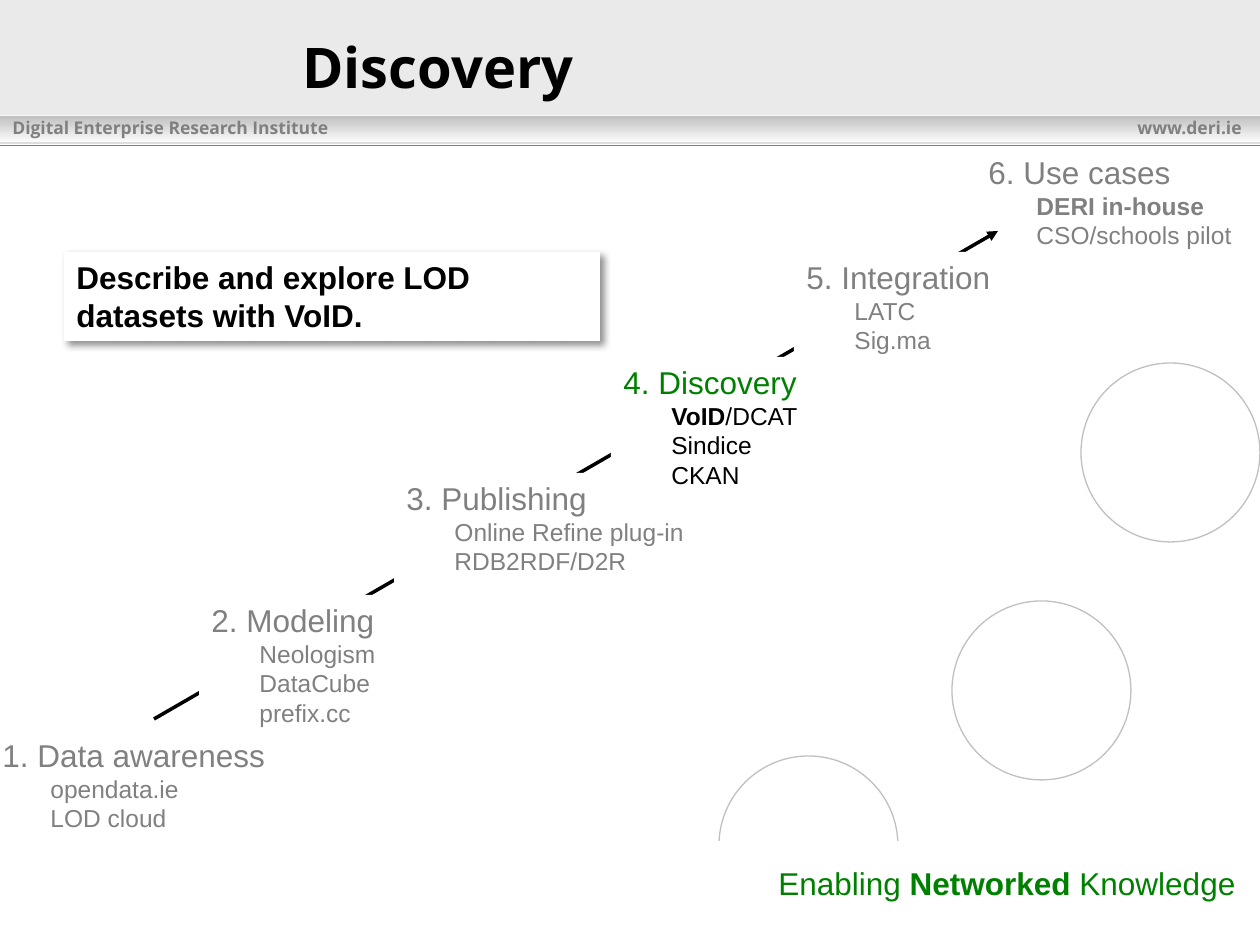
import copy
from dataclasses import dataclass

import pptx
import pptx.dml.color
import pptx.enum.shapes
import pptx.enum.text
import pptx.oxml
import pptx.oxml.ns
import pptx.util

SHAPE = pptx.enum.shapes.MSO_SHAPE
NS = pptx.oxml.ns.nsdecls("a")
qn = pptx.oxml.ns.qn


@dataclass(frozen=True)
class Theme:
    body: str = "Arial"
    heading: str = "Open Sans"
    black: str = "000000"
    white: str = "FFFFFF"
    grey: str = "808080"
    green: str = "008000"
    silver: str = "C0C0C0"
    band: str = "EAEAEA"
    rule: str = "DDDDDD"
    pale: str = "F8F8F8"
    title_size: int = 32
    large: int = 18
    detail: int = 14
    small: int = 10


T = Theme()


def px(n):
    return round(n * 914400 / 126)


def rgb(code):
    return pptx.dml.color.RGBColor.from_string(code)


def add_shape(slide, kind, box, fill=None, line=None):
    sp = slide.shapes.add_shape(kind, *map(px, box))
    sp.shadow.inherit = False
    if fill:
        sp.fill.solid()
        sp.fill.fore_color.rgb = rgb(fill)
    else:
        sp.fill.background()
    if line:
        sp.line.color.rgb = rgb(line)
        sp.line.width = pptx.util.Pt(0.75)
    else:
        sp.line.fill.background()
    return sp


def add_line(slide, start, end, color, width, arrow=False):
    c = slide.shapes.add_connector(
        pptx.enum.shapes.MSO_CONNECTOR.STRAIGHT, *map(px, start + end))
    c.line.color.rgb = rgb(color)
    c.line.width = pptx.util.Pt(width)
    if arrow:
        c.line._get_or_add_ln().append(
            pptx.oxml.parse_xml(f'<a:tailEnd {NS} type="triangle"/>'))
    c._element.spPr.append(pptx.oxml.parse_xml(f"<a:effectLst {NS}/>"))


def add_text(slide, box, runs, font=T.body, fill=None, wrap=True,
             hang=0, middle=False):
    """Each run is (text, size, color, bold); a line feed breaks the line."""
    if fill:
        sp = add_shape(slide, SHAPE.RECTANGLE, box, fill)
    else:
        sp = slide.shapes.add_textbox(*map(px, box))
    tf = sp.text_frame
    tf.word_wrap = wrap
    anchor = pptx.enum.text.MSO_ANCHOR
    tf.vertical_anchor = anchor.MIDDLE if middle else anchor.TOP
    p = tf.paragraphs[0]
    p.alignment = pptx.enum.text.PP_ALIGN.LEFT
    if hang:
        pPr = p._p.get_or_add_pPr()
        pPr.set("marL", str(px(hang)))
        pPr.set("indent", str(-px(hang)))
    for text, size, color, bold in runs:
        for i, part in enumerate(text.split("\n")):
            if i:
                p.add_line_break()
            if part:
                r = p.add_run()
                r.text = part
                r.font.name = font
                r.font.size = pptx.util.Pt(size)
                r.font.bold = bold
                r.font.color.rgb = rgb(color)
    # Breaks take the format of the run before them
    for br in p._p.findall(qn("a:br")):
        br.append(copy.deepcopy(br.getprevious().find(qn("a:rPr"))))
    return sp


def add_step(slide, box, heading, details, active=False, fill=T.white,
             wrap=False):
    """details lists (text, bold) pairs below the numbered heading."""
    head_color, color = (T.green, T.black) if active else (T.grey, T.grey)
    runs = [(heading + "\n", T.large, head_color, False)]
    runs += [(text, T.detail, color, bold) for text, bold in details]
    add_text(slide, box, runs, fill=fill, wrap=wrap, hang=48)


def add_background(slide):
    # Title band and circles, the lowest one cut by the footer
    add_shape(slide, SHAPE.RECTANGLE, (0, 0, 1260, 115), T.band)
    for x, y in ((719, 756), (952, 601), (1081, 363)):
        add_shape(slide, SHAPE.OVAL, (x, y, 179, 179), line=T.silver)
    add_shape(slide, SHAPE.RECTANGLE, (0, 841, 1260, 104), T.white)

    # Institute bar
    bar = add_shape(slide, SHAPE.RECTANGLE, (0, 116, 1260, 28))
    bar.fill.gradient()
    bar.fill.gradient_angle = 270
    for stop, color, pos in zip(bar.fill.gradient_stops,
                                (T.silver, T.white), (0, 1)):
        stop.color.rgb = rgb(color)
        stop.position = pos
    for y, color, width in ((145, T.grey, 0.5), (143, T.rule, 1.5),
                            (115, T.pale, 0.5)):
        add_line(slide, (0, y), (1260, y), color, width)
    for box, text in (((0, 111, 412, 34), "Digital Enterprise Research Institute"),
                      ((1125, 111, 134, 34), "www.deri.ie")):
        add_text(slide, box, [(text, T.small, T.grey, True)], T.heading)

    # Footer motto
    add_text(slide, (766, 858, 494, 50),
             [("Enabling", T.large, T.green, False),
              (" Networked ", T.large, T.green, True),
              ("Knowledge", T.large, T.green, False)])


def add_callout(slide):
    sp = add_text(slide, (64, 252, 536, 89),
                  [("Describe and explore LOD datasets with VoID.",
                    T.large, T.black, True)], fill=T.white)
    sp._element.spPr.find(qn("a:effectLst")).append(pptx.oxml.parse_xml(
        f'<a:outerShdw {NS} blurRad="50800" dist="38100" dir="2700000" '
        f'algn="tl" rotWithShape="0"><a:srgbClr val="{T.black}">'
        '<a:alpha val="43000"/></a:srgbClr></a:outerShdw>'))


def main():
    prs = pptx.Presentation()
    prs.slide_width, prs.slide_height = px(1260), px(945)
    slide = prs.slides.add_slide(prs.slide_layouts[6])
    add_background(slide)
    add_text(slide, (290, 18, 737, 97),
             [("Discovery", T.title_size, T.black, True)],
             T.heading, middle=True)

    # Rising arrow, covered in places by the steps
    add_line(slide, (154, 719), (998, 231), T.black, 2, arrow=True)
    add_step(slide, (-10, 730, 307, 111), "1. Data awareness",
             [("opendata.ie\nLOD cloud", False)], fill=None)
    add_step(slide, (199, 595, 208, 140), "2. Modeling",
             [("Neologism\nDataCube\nprefix.cc", False)])
    add_step(slide, (394, 473, 333, 111), "3. Publishing",
             [("Online Refine plug-in\nRDB2RDF/D2R", False)])
    add_step(slide, (611, 357, 204, 140), "4. Discovery",
             [("VoID", True), ("/DCAT\nSindice\nCKAN", False)], active=True)
    add_callout(slide)
    add_step(slide, (794, 252, 236, 111), "5. Integration",
             [("LATC\nSig.ma", False)])
    add_step(slide, (976, 147, 294, 111), "6. Use cases",
             [("DERI in-house\n", True), ("CSO/schools pilot", False)],
             fill=None, wrap=True)
    prs.save("out.pptx")


if __name__ == "__main__":
    main()
